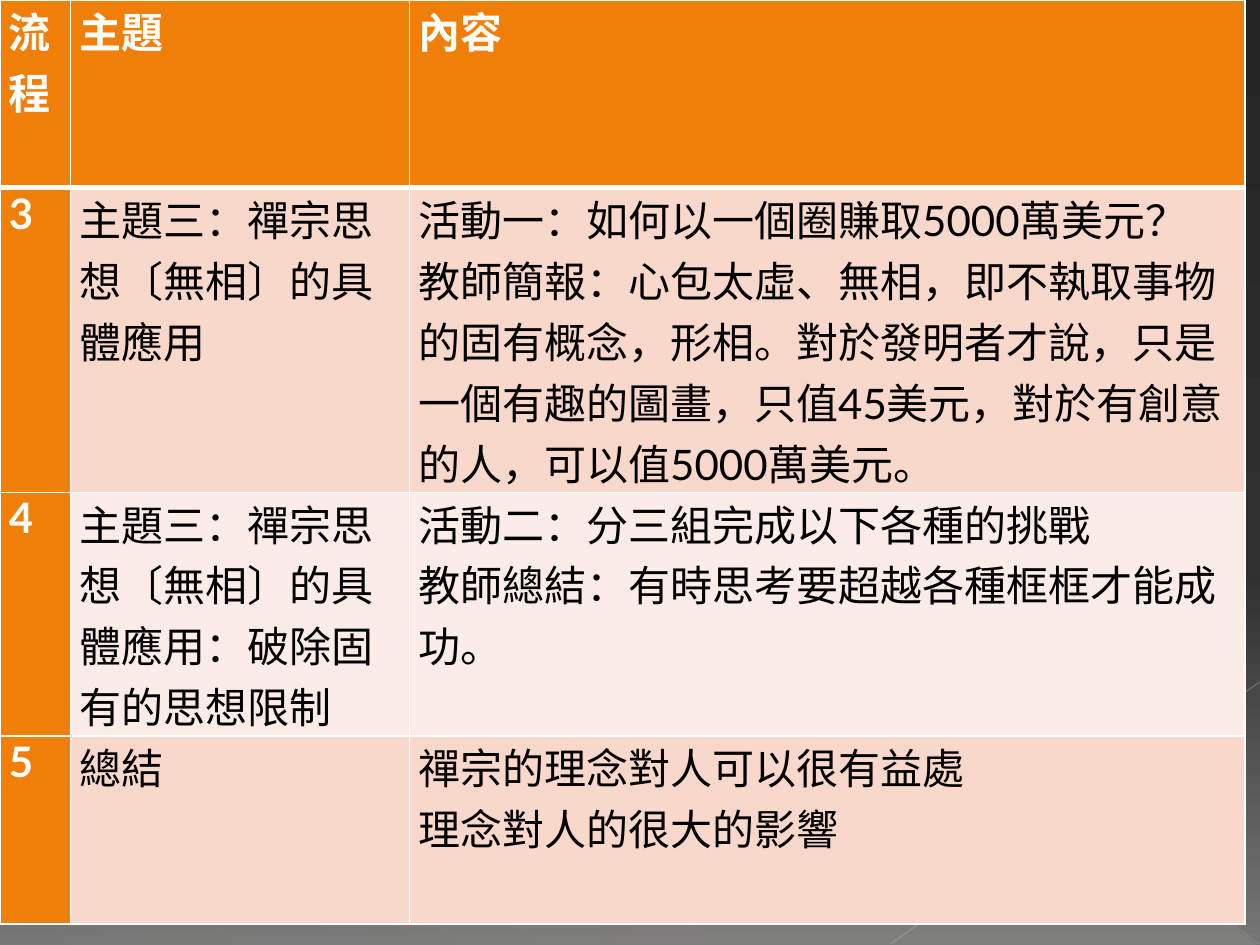
"""Build the lesson-plan slide: a three-column table of steps, topics and content."""
from lxml.etree import SubElement
from pptx import Presentation
from pptx.dml.color import RGBColor
from pptx.enum.shapes import MSO_CONNECTOR, MSO_SHAPE
from pptx.oxml.ns import qn
from pptx.util import Inches, Pt

HEADINGS = ["流程", "主題", "內容"]
STEPS = [
    ("3", "主題三：禪宗思想〔無相〕的具體應用", [
        "活動一：如何以一個圈賺取5000萬美元？",
        "教師簡報：心包太虛、無相，即不執取事物的固有概念，形相。對於發明者才說，"
        "只是一個有趣的圖畫，只值45美元，對於有創意的人，可以值5000萬美元。"]),
    ("4", "主題三：禪宗思想〔無相〕的具體應用：破除固有的思想限制", [
        "活動二：分三組完成以下各種的挑戰",
        "教師總結：有時思考要超越各種框框才能成功。"]),
    ("5", "總結", [
        "禪宗的理念對人可以很有益處",
        "理念對人的很大的影響"]),
]
THEME = {
    "font": "Lato", "size": 24, "light": "FFFFFF", "dark": "000000",
    "accent": "F07F09", "bands": ["F9D8CC", "FCECE7"],
    "backdrop": [(0, "242424", 100), (60, "303030", 100), (100, "767676", 100)],
    "sheen": [(0, "E3DED1", 10), (70, "E3DED1", 8), (100, "E3DED1", 1)],
}
WIDTH, HEIGHT = 10, 7.5
COLUMNS = [0.56, 2.69, 6.63]
ROWS = [1.49, 2.26, 1.81, 1.49]
RAYS = [
    ((0, 0.01), (9.99, 7.49), "B6B6B6", 0.39, 35),
    ((10, 5.41), (7.07, 7.49), "BFBFBF", 0.47, 45),
]


def add_color(parent, color, opacity=100):
    tone = SubElement(parent, qn("a:srgbClr"), val=color)
    if opacity < 100:
        SubElement(tone, qn("a:alpha"), val=str(opacity * 1000))


def set_gradient(fill, owner, stops, angle):
    fill.gradient()
    gradient = owner.find(".//" + qn("a:gradFill"))
    for child in list(gradient):
        gradient.remove(child)
    stop_list = SubElement(gradient, qn("a:gsLst"))
    for position, color, opacity in stops:
        add_color(SubElement(stop_list, qn("a:gs"), pos=str(position * 1000)), color, opacity)
    SubElement(gradient, qn("a:lin"), ang=str(angle * 60000), scaled="0")


def write(frame, paragraphs, *, color, bold):
    for index, words in enumerate(paragraphs):
        paragraph = frame.add_paragraph() if index else frame.paragraphs[0]
        run = paragraph.add_run()
        run.text = words
        run.font.name, run.font.size, run.font.bold = THEME["font"], Pt(THEME["size"]), bold
        run.font.color.rgb = RGBColor.from_string(color)


def set_borders(cell, bottom):
    properties = cell._tc.get_or_add_tcPr()
    for index, (side, width) in enumerate([("L", 1), ("R", 1), ("T", 1), ("B", bottom)]):
        border = properties.makeelement(qn(f"a:ln{side}"), {"w": str(Pt(width))})
        add_color(SubElement(border, qn("a:solidFill")), THEME["light"])
        properties.insert(index, border)


def add_backdrop(slide):
    set_gradient(slide.background.fill, slide._element, THEME["backdrop"], 90)
    corner = slide.shapes.add_shape(
        MSO_SHAPE.RIGHT_TRIANGLE, Inches(0.01), Inches(0.02), Inches(9.98), Inches(7.48))
    corner.shadow.inherit = False
    corner.line.fill.background()
    set_gradient(corner.fill, corner._element, THEME["sheen"], 133)
    for start, end, color, width, opacity in RAYS:
        ray = slide.shapes.add_connector(
            MSO_CONNECTOR.STRAIGHT, *[Inches(value) for value in start + end])
        ray.line.width = Pt(width)
        ray.line.color.rgb = RGBColor.from_string(color)
        tone = ray._element.find(".//" + qn("a:srgbClr"))
        SubElement(tone, qn("a:alpha"), val=str(opacity * 1000))
        SubElement(ray._element.spPr, qn("a:effectLst"))


def add_plan(slide):
    plan = slide.shapes.add_table(
        len(ROWS), len(COLUMNS), 0, 0, Inches(sum(COLUMNS)), Inches(sum(ROWS))).table
    for column, width in zip(plan.columns, COLUMNS):
        column.width = Inches(width)
    for row, height in zip(plan.rows, ROWS):
        row.height = Inches(height)
    for r, entries in enumerate([HEADINGS, *STEPS]):
        for c, entry in enumerate(entries):
            cell = plan.cell(r, c)
            label = r == 0 or c == 0
            cell.margin_left = cell.margin_right = Inches(0.07)
            cell.margin_top = cell.margin_bottom = 0
            cell.fill.solid()
            cell.fill.fore_color.rgb = RGBColor.from_string(
                THEME["accent"] if label else THEME["bands"][(r - 1) % 2])
            set_borders(cell, bottom=1 if r else 3)
            write(cell.text_frame, [entry] if isinstance(entry, str) else entry,
                  color=THEME["light" if label else "dark"], bold=label)


def main():
    deck = Presentation()
    deck.slide_width, deck.slide_height = Inches(WIDTH), Inches(HEIGHT)
    slide = deck.slides.add_slide(deck.slide_layouts[6])
    add_backdrop(slide)
    add_plan(slide)
    deck.save("out.pptx")


if __name__ == "__main__":
    main()
